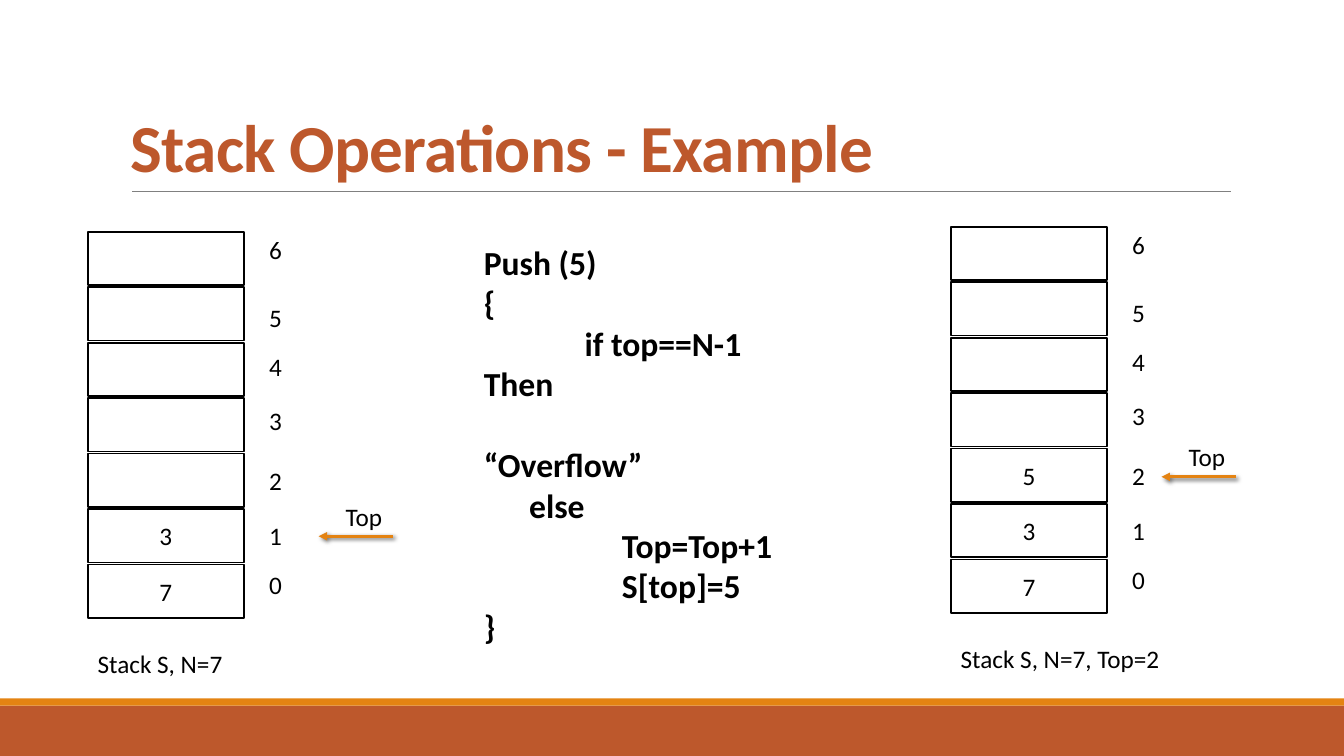
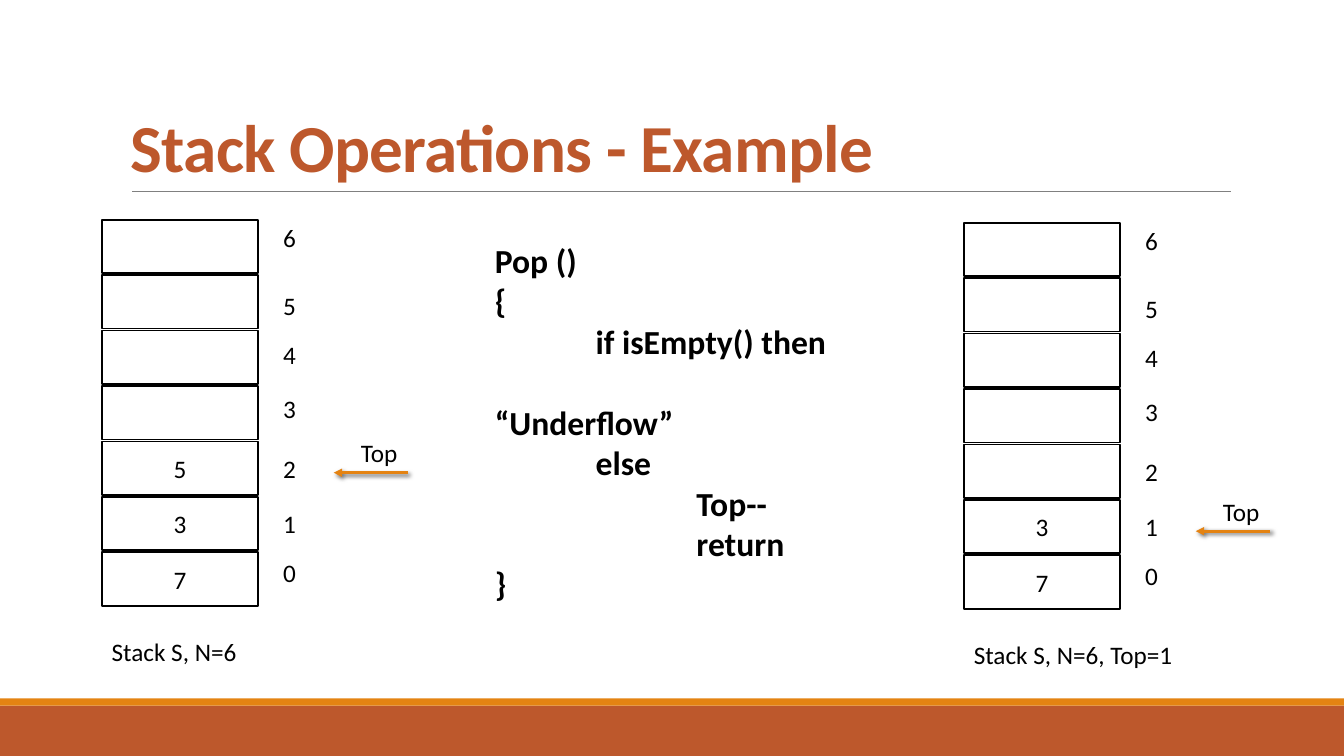
from dataclasses import dataclass

from lxml import etree
from pptx import Presentation
from pptx.dml.color import RGBColor
from pptx.enum.shapes import MSO_CONNECTOR, MSO_SHAPE
from pptx.enum.text import MSO_ANCHOR, PP_ALIGN
from pptx.oxml import parse_xml
from pptx.oxml.ns import nsdecls, qn
from pptx.util import Inches, Pt


@dataclass(frozen=True)
class Theme:
    font: str = "Calibri"
    title: RGBColor = RGBColor(0xBD, 0x58, 0x2C)
    accent: RGBColor = RGBColor(0xE4, 0x83, 0x12)
    rule: RGBColor = RGBColor(0x80, 0x80, 0x80)
    ink: RGBColor = RGBColor(0, 0, 0)
    paper: RGBColor = RGBColor(0xFF, 0xFF, 0xFF)
    title_size: int = 48
    code_size: int = 24
    label_size: int = 18


SHADOW = (
    f'<a:effectLst {nsdecls("a")}>'
    '<a:outerShdw blurRad="38100" dist="25400" dir="2700000" rotWithShape="0">'
    '<a:srgbClr val="000000"><a:alpha val="60000"/></a:srgbClr>'
    "</a:outerShdw></a:effectLst>"
)
SLIDE_W, SLIDE_H = 13.33, 7.5
CELL_W, CELL_H, CELL_STEP = 1.55, 0.53, 0.55
CAPACITY = 7
INDEX_X = 1.7
INDEX_Y = (3.3, 2.81, 2.27, 1.67, 1.14, 0.65, -0.02)
CAPTION_Y = 4.08
ARROW_W = 0.74


class Deck:
    def __init__(self, prs, theme):
        self.prs = prs
        self.theme = theme
        self.shapes = None

    def style(self, p, size, color, bold=False):
        for r in p.runs:
            r.font.name = self.theme.font
            r.font.size = Pt(size)
            r.font.color.rgb = color
            r.font.bold = bold

    def slide(self, title):
        t = self.theme
        s = self.prs.slides.add_slide(self.prs.slide_layouts[6])
        self.shapes = s.shapes
        self.box(0, 7, SLIDE_W, 0.5, t.title)
        self.box(0, 6.93, SLIDE_W, 0.07, t.accent)
        self.line(1.31, 12.21, 1.9, t.rule, 0.5)
        sp = self.text(1.2, 0.31, 11, 1.59, title, t.title_size, t.title, True)
        sp.text_frame.vertical_anchor = MSO_ANCHOR.BOTTOM
        p = sp.text_frame.paragraphs[0]
        p.line_spacing = 0.85
        p.runs[0].font._element.set("spc", "-50")

    def box(self, x, y, w, h, fill):
        sp = self.shapes.add_shape(
            MSO_SHAPE.RECTANGLE, Inches(x), Inches(y), Inches(w), Inches(h)
        )
        sp.shadow.inherit = False
        sp.fill.solid()
        sp.fill.fore_color.rgb = fill
        sp.line.fill.background()
        return sp

    def cell(self, x, y, value):
        t = self.theme
        sp = self.box(x, y, CELL_W, CELL_H, t.paper)
        sp.line.color.rgb = t.ink
        sp.line.width = Pt(1.25)
        if value:
            tf = sp.text_frame
            tf.text = value
            tf.vertical_anchor = MSO_ANCHOR.MIDDLE
            tf.paragraphs[0].alignment = PP_ALIGN.CENTER
            self.style(tf.paragraphs[0], t.label_size, t.ink)

    def text(self, x, y, w, h, text, size, color, bold=False, wrap=True):
        sp = self.shapes.add_textbox(Inches(x), Inches(y), Inches(w), Inches(h))
        tf = sp.text_frame
        tf.word_wrap = wrap
        tf.text = text
        for p in tf.paragraphs:
            self.style(p, size, color, bold)
        return sp

    def label(self, x, y, w, text, wrap=False):
        t = self.theme
        self.text(x, y, w, 0.4, text, t.label_size, t.ink, wrap=wrap)

    def line(self, x1, x2, y, color, width):
        cxn = self.shapes.add_connector(
            MSO_CONNECTOR.STRAIGHT, Inches(x1), Inches(y), Inches(x2), Inches(y)
        )
        cxn.line.color.rgb = color
        cxn.line.width = Pt(width)
        etree.SubElement(cxn._element.spPr, qn("a:effectLst"))
        return cxn

    def pointer(self, x, y):
        cxn = self.line(x + ARROW_W, x, y, self.theme.accent, 2)
        ln = cxn.line._get_or_add_ln()
        etree.SubElement(ln, qn("a:tailEnd")).set("type", "triangle")
        spPr = cxn._element.spPr
        spPr.replace(spPr.find(qn("a:effectLst")), parse_xml(SHADOW))
        self.label(x + 0.17, y - 0.4, 0.65, "Top")

    def stack(self, x, y, values, caption, pointer_at):
        outer = self.shapes
        self.shapes = outer.add_group_shape().shapes
        for i in range(CAPACITY):
            value = values[i] if i < len(values) else ""
            self.cell(x, y + (CAPACITY - 1 - i) * CELL_STEP, value)
            self.label(x + INDEX_X, y + INDEX_Y[i], 0.34, str(i))
        self.label(x, y + CAPTION_Y, 2.47, caption, wrap=True)
        self.pointer(*pointer_at)
        self.shapes = outer

    def code(self, x, y, w, h, lines):
        t = self.theme
        text = "\n".join(line for line, indent, gap in lines)
        sp = self.text(x, y, w, h, text, t.code_size, t.ink, True)
        for p, (line, indent, gap) in zip(sp.text_frame.paragraphs, lines):
            pPr = p._p.get_or_add_pPr()
            pPr.set("marL", "0")
            pPr.set("indent", str(Inches(indent)))
            p.space_before = Pt(gap)


def main():
    prs = Presentation()
    prs.slide_width = Inches(SLIDE_W)
    prs.slide_height = Inches(SLIDE_H)
    deck = Deck(prs, Theme())
    title = "Stack Operations - Example"
    blank_line = 29.3

    deck.slide(title)
    deck.code(4.7, 2.35, 3.36, 4.1, [
        ("Push (5)", 0, 0),
        ("{", 0, 0),
        ("if top==N-1 Then", 1, 0),
        ("“Overflow”", 0, blank_line),
        ("else", 0.45, 0),
        ("Top=Top+1", 1.37, 0),
        ("S[top]=5", 1.37, 0),
        ("}", 0, 0),
    ])
    deck.stack(0.87, 2.3, ["7", "3"], "Stack S, N=7", (3.16, 5.32))
    deck.stack(9.43, 2.25, ["7", "3", "5"], "Stack S, N=7, Top=2", (11.52, 4.73))

    deck.slide(title)
    deck.code(4.81, 2.33, 3.57, 3.74, [
        ("Pop ()", 0, 0),
        ("{", 0, 0),
        ("if isEmpty() then", 1, 0),
        ("“Underflow”", 0, blank_line),
        ("else", 1, 0),
        ("Top--", 2, 0),
        ("return", 2, 0),
        ("}", 0, 0),
    ])
    deck.stack(1.01, 2.18, ["7", "3", "5"], "Stack S, N=6", (3.31, 4.69))
    deck.stack(9.56, 2.21, ["7", "3"], "Stack S, N=6, Top=1", (11.86, 5.27))

    prs.save("out.pptx")


if __name__ == "__main__":
    main()
